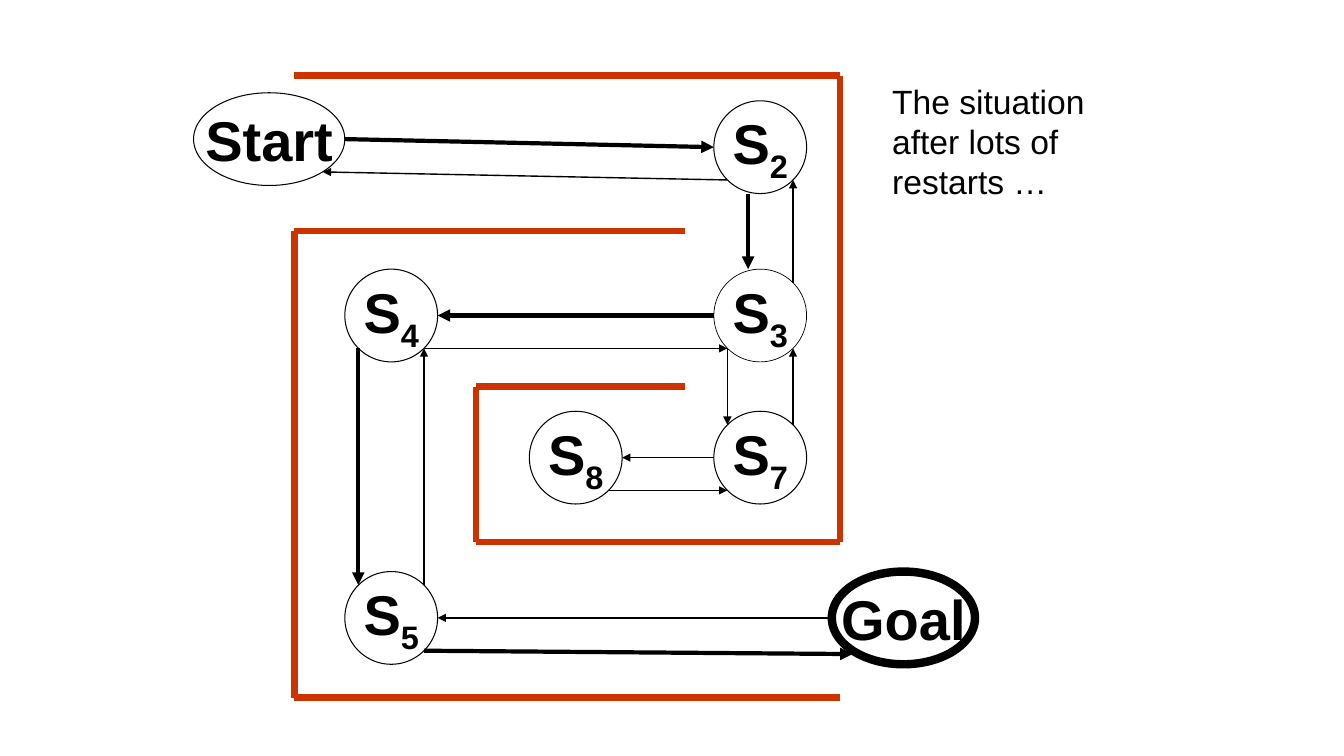
"""Build a slide of a state maze whose walls enclose a path from Start to Goal."""
from dataclasses import dataclass

from lxml.etree import SubElement
from pptx import Presentation
from pptx.dml.color import RGBColor
from pptx.enum.shapes import MSO_CONNECTOR, MSO_SHAPE
from pptx.enum.text import MSO_ANCHOR, MSO_AUTO_SIZE, PP_ALIGN
from pptx.oxml.ns import qn
from pptx.util import Inches, Pt


@dataclass(frozen=True)
class Theme:
    font: str = "Arial"
    ink: RGBColor = RGBColor(0x00, 0x00, 0x00)
    paper: RGBColor = RGBColor(0xFF, 0xFF, 0xFF)
    wall: RGBColor = RGBColor(0xCC, 0x33, 0x00)
    state_size: int = 40
    caption_size: int = 24
    wall_width: float = 4.5
    strong: float = 3
    weak: float = 1
    outline: float = 0.75


THEME = Theme()
SLIDE_SIZE = (13.33, 7.5)
CAPTION = "The situation after lots of restarts …"
CAPTION_BOX = (8.75, 0.75, 2.58, 1.31)

WALL_COLUMNS = (2.92, 4.72, 6.79, 8.33)
WALL_TOP, WALL_STEP = 0.75, 1.5425
WALLS = [
    ((0, 0), (3, 0)), ((0, 4), (3, 4)), ((3, 0), (3, 3)), ((0, 1), (0, 4)),
    ((2, 1), (0, 1)), ((1, 2), (2, 2)), ((1, 3), (3, 3)), ((1, 2), (1, 3)),
]

STATE_HEIGHT = 0.92
STATES = {
    "Start": (1.92, 0.92, 1.5, THEME.outline),
    "S2": (7.08, 1.0, STATE_HEIGHT, THEME.outline),
    "S3": (7.08, 2.67, STATE_HEIGHT, 0.5),
    "S4": (3.42, 2.67, STATE_HEIGHT, THEME.outline),
    "S5": (3.42, 5.67, STATE_HEIGHT, THEME.outline),
    "Goal": (8.25, 5.67, 1.42, 6),
    "S7": (7.08, 4.08, STATE_HEIGHT, THEME.outline),
    "S8": (5.25, 4.08, STATE_HEIGHT, THEME.outline),
}

NEAR, FAR = 0.146, 0.854
SITES = {
    "W": (0, 0.5), "E": (1, 0.5),
    "NW": (NEAR, NEAR), "NE": (FAR, NEAR), "SW": (NEAR, FAR), "SE": (FAR, FAR),
    "top": (0.37, 0), "bottom": (0.37, 1), "foot": (NEAR, 0.89),
}
MOVES = [
    ("Start", "E", "S2", "W", THEME.strong),
    ("S2", "SW", "Start", "SE", THEME.weak),
    ("S2", "bottom", "S3", "top", THEME.strong),
    ("S3", "NE", "S2", "SE", THEME.weak),
    ("S3", "SW", "S7", "NW", THEME.weak),
    ("S7", "NE", "S3", "SE", THEME.weak),
    ("S7", "W", "S8", "E", THEME.weak),
    ("S8", "SE", "S7", "SW", THEME.weak),
    ("S4", "SE", "S3", "SW", THEME.weak),
    ("S3", "W", "S4", "E", THEME.strong),
    ("S4", "SW", "S5", "NW", THEME.strong),
    ("S5", "NE", "S4", "SE", THEME.weak),
    ("S5", "SE", "Goal", "foot", THEME.strong),
    ("Goal", "W", "S5", "E", THEME.weak),
]


def format_run(run, size, bold=False):
    run.font.name = THEME.font
    run.font.size = Pt(size)
    run.font.bold = bold
    run.font.color.rgb = THEME.ink


def wall_corner(column, row):
    return WALL_COLUMNS[column], WALL_TOP + row * WALL_STEP


def state_site(state, site):
    left, top, width, _ = STATES[state]
    across, down = SITES[site]
    return left + across * width, top + down * STATE_HEIGHT


def add_line(slide, start, end, color, width, arrow=False):
    line = slide.shapes.add_connector(
        MSO_CONNECTOR.STRAIGHT, *(Inches(v) for v in (*start, *end)))
    line.line.color.rgb = color
    line.line.width = Pt(width)
    if arrow:
        SubElement(line.line._get_or_add_ln(), qn("a:tailEnd"), type="triangle")
    SubElement(line._element.spPr, qn("a:effectLst"))


def add_state(slide, name, left, top, width, outline):
    state = slide.shapes.add_shape(
        MSO_SHAPE.OVAL, *(Inches(v) for v in (left, top, width, STATE_HEIGHT)))
    state.shadow.inherit = False
    state.fill.solid()
    state.fill.fore_color.rgb = THEME.paper
    state.line.color.rgb = THEME.ink
    state.line.width = Pt(outline)
    frame = state.text_frame
    frame.word_wrap = False
    frame.vertical_anchor = MSO_ANCHOR.MIDDLE
    label = frame.paragraphs[0]
    label.alignment = PP_ALIGN.CENTER
    word = name.rstrip("0123456789")
    for part in filter(None, (word, name[len(word):])):
        run = label.add_run()
        run.text = part
        format_run(run, THEME.state_size, bold=True)
        if part.isdigit():
            run.font._element.set("baseline", "-25000")


def add_caption(slide):
    caption = slide.shapes.add_textbox(*(Inches(v) for v in CAPTION_BOX))
    frame = caption.text_frame
    frame.word_wrap = True
    frame.auto_size = MSO_AUTO_SIZE.SHAPE_TO_FIT_TEXT
    frame.text = CAPTION
    format_run(frame.paragraphs[0].runs[0], THEME.caption_size)


def main():
    deck = Presentation()
    deck.slide_width, deck.slide_height = (Inches(v) for v in SLIDE_SIZE)
    slide = deck.slides.add_slide(deck.slide_layouts[6])
    for start, end in WALLS:
        add_line(slide, wall_corner(*start), wall_corner(*end),
                 THEME.wall, THEME.wall_width)
    for name, place in STATES.items():
        add_state(slide, name, *place)
    for source, exit_site, target, entry_site, width in MOVES:
        add_line(slide, state_site(source, exit_site),
                 state_site(target, entry_site), THEME.ink, width, arrow=True)
    add_caption(slide)
    deck.save("out.pptx")


if __name__ == "__main__":
    main()
